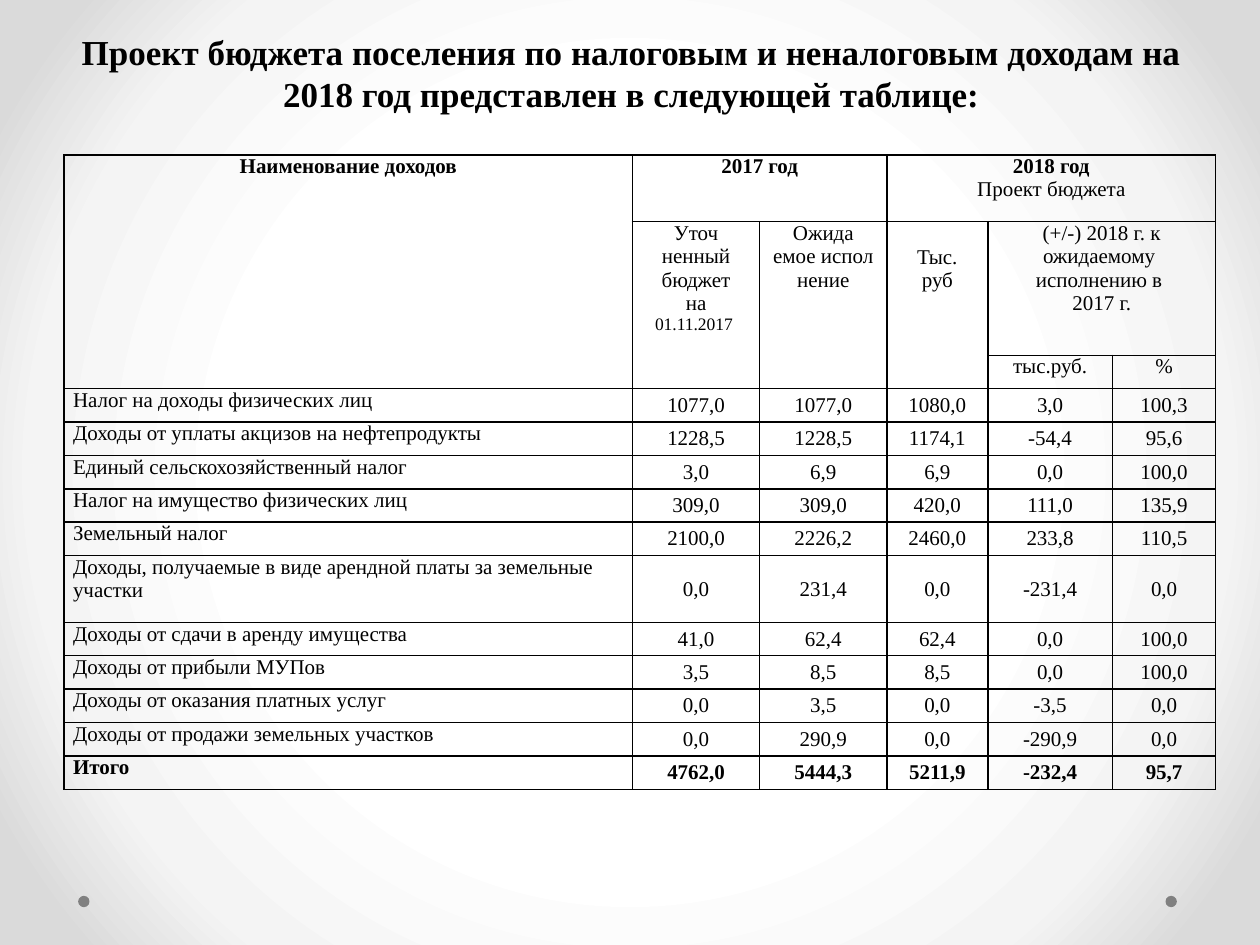
from itertools import product

from pptx import Presentation
from pptx.dml.color import RGBColor
from pptx.enum import shapes, text
from pptx.oxml import parse_xml
from pptx.oxml.ns import nsdecls, qn
from pptx.util import Inches, Pt

BLACK = RGBColor(0x00, 0x00, 0x00)
GRAY = RGBColor(0x80, 0x80, 0x80)
WHITE = RGBColor(0xFF, 0xFF, 0xFF)
PALE = RGBColor(0xF4, 0xF4, 0xF4)
SILVER = RGBColor(0xDA, 0xDA, 0xDA)
FONT = "Times New Roman"
LEFT, CENTER, JUSTIFY = (text.PP_ALIGN.LEFT, text.PP_ALIGN.CENTER, text.PP_ALIGN.JUSTIFY)

TITLE = ("Проект бюджета поселения по налоговым и неналоговым доходам "
         "на 2018 год представлен в следующей таблице:")
COLUMN_WIDTHS = [4.51, 1.01, 1.01, 0.8, 0.99, 0.82]
ROW_UNIT = 0.265
ROW_UNITS = [2, 4, 1, 1, 1, 1, 1, 1, 2, 1, 1, 1, 1, 1]

# Header cells: row, column, row span, column span, lines of (text, size, bold)
HEADERS = [
    (0, 0, 3, 1, [("Наименование доходов", 12, True)]),
    (0, 1, 1, 2, [("2017 год", 12, True)]),
    (0, 3, 1, 3, [("2018 год", 12, True), ("Проект бюджета", 12, False)]),
    (1, 1, 2, 1, [("Уточ", 12, False), ("ненный бюджет", 12, False),
                  ("на", 12, False), ("01.11.2017 ", 10, False)]),
    (1, 2, 2, 1, [("Ожида", 12, False), ("емое испол", 12, False), ("нение", 12, False)]),
    (1, 3, 2, 1, [("Тыс.", 12, False), ("руб", 12, False)]),
    (1, 4, 1, 2, [("(+/-) 2018 г. к ожидаемому ", 12, False),
                  ("исполнению в ", 12, False), ("2017 г.", 12, False)]),
    (2, 4, 1, 1, [("тыс.руб.", 12, False)]),
    (2, 5, 1, 1, [("%", 12, False)]),
]
INCOMES = [
    ("Налог на доходы физических лиц", "1077,0", "1077,0", "1080,0", "3,0", "100,3"),
    ("Доходы от уплаты акцизов на нефтепродукты", "1228,5", "1228,5", "1174,1", "-54,4", "95,6"),
    ("Единый сельскохозяйственный налог", "3,0", "6,9", "6,9", "0,0", "100,0"),
    ("Налог на имущество физических лиц", "309,0", "309,0", "420,0", "111,0", "135,9"),
    ("Земельный налог", "2100,0", "2226,2", "2460,0", "233,8", "110,5"),
    ("Доходы, получаемые в виде арендной платы за земельные участки",
     "0,0", "231,4", "0,0", "-231,4", "0,0"),
    ("Доходы от сдачи в аренду имущества", "41,0", "62,4", "62,4", "0,0", "100,0"),
    ("Доходы от прибыли МУПов", "3,5", "8,5", "8,5", "0,0", "100,0"),
    ("Доходы от оказания платных услуг", "0,0", "3,5", "0,0", "-3,5", "0,0"),
    ("Доходы от продажи земельных участков", "0,0", "290,9", "0,0", "-290,9", "0,0"),
    ("Итого", "4762,0", "5444,3", "5211,9", "-232,4", "95,7"),
]
FIRST_INCOME_ROW = 3
FIRST_JUSTIFIED = 6


def add_run(paragraph, words, size, bold):
    run = paragraph.add_run()
    run.text = words
    font = run.font
    font.name, font.size, font.bold = FONT, Pt(size), bold
    font.color.rgb = BLACK


def paint_background(slide):
    slide.background.fill.gradient()
    gradient = slide.background._cSld.find(".//" + qn("a:gradFill"))
    for child in list(gradient):
        gradient.remove(child)
    stops = "".join(f'<a:gs pos="{share * 1000}"><a:srgbClr val="{color}"/></a:gs>'
                    for share, color in [(0, WHITE), (50, WHITE), (76, PALE),
                                         (92, SILVER), (100, SILVER)])
    gradient.append(parse_xml(f'<a:gsLst {nsdecls("a")}>{stops}</a:gsLst>'))
    gradient.append(parse_xml(
        f'<a:path {nsdecls("a")} path="circle">'
        '<a:fillToRect l="50000" t="50000" r="50000" b="50000"/></a:path>'))


def add_corner_dots(slide, lefts, top, size):
    for left in lefts:
        dot = slide.shapes.add_shape(shapes.MSO_SHAPE.OVAL, Inches(left), Inches(top),
                                     Inches(size), Inches(size))
        dot.shadow.inherit = False
        dot.fill.solid()
        dot.fill.fore_color.rgb = GRAY
        dot.line.fill.background()


def place_title(slide, left, top, width, height):
    title = slide.shapes.title
    title.left, title.top = Inches(left), Inches(top)
    title.width, title.height = Inches(width), Inches(height)
    frame = title.text_frame
    frame.word_wrap = True
    frame.auto_size = text.MSO_AUTO_SIZE.NONE
    frame.vertical_anchor = text.MSO_ANCHOR.BOTTOM
    frame.paragraphs[0].alignment = CENTER
    add_run(frame.paragraphs[0], TITLE, 20, True)


def format_cell(cell):
    cell.margin_left = cell.margin_right = Inches(0.07)
    cell.margin_top = cell.margin_bottom = 0
    properties = cell._tc.get_or_add_tcPr()
    for side in "LRTB":
        properties.append(parse_xml(
            f'<a:ln{side} {nsdecls("a")} w="{Pt(1)}"><a:solidFill>'
            f'<a:srgbClr val="{BLACK}"/></a:solidFill></a:ln{side}>'))
    cell.fill.background()


def write_cell(cell, lines, alignment=CENTER):
    frame = cell.text_frame
    for index, (words, size, bold) in enumerate(lines):
        paragraph = frame.add_paragraph() if index else frame.paragraphs[0]
        paragraph.alignment = alignment
        add_run(paragraph, words, size, bold)


def add_income_table(slide, left, top, width, height):
    table = slide.shapes.add_table(len(ROW_UNITS), len(COLUMN_WIDTHS), Inches(left),
                                   Inches(top), Inches(width), Inches(height)).table
    table.first_row = table.horz_banding = False
    for column, column_width in zip(table.columns, COLUMN_WIDTHS):
        column.width = Inches(column_width)
    for row, units in zip(table.rows, ROW_UNITS):
        row.height = Inches(units * ROW_UNIT)
    for row, column in product(range(len(ROW_UNITS)), range(len(COLUMN_WIDTHS))):
        format_cell(table.cell(row, column))

    # Header with merged cells
    for row, column, row_span, column_span, lines in HEADERS:
        cell = table.cell(row, column)
        if row_span * column_span > 1:
            cell.merge(table.cell(row + row_span - 1, column + column_span - 1))
        write_cell(cell, lines)
    table.cell(1, 3).margin_top = Inches(0.19)

    # Incomes, with the total in the last row
    for index, (income, *amounts) in enumerate(INCOMES):
        row = FIRST_INCOME_ROW + index
        bold = index == len(INCOMES) - 1
        write_cell(table.cell(row, 0), [(income, 12, bold)],
                   JUSTIFY if index >= FIRST_JUSTIFIED else LEFT)
        for column, amount in enumerate(amounts, start=1):
            cell = table.cell(row, column)
            cell.vertical_anchor = text.MSO_ANCHOR.MIDDLE
            write_cell(cell, [(amount, 12, bold)])


def main():
    deck = Presentation()
    deck.slide_width, deck.slide_height = Inches(10), Inches(7.5)
    slide = deck.slides.add_slide(deck.slide_layouts[5])
    paint_background(slide)
    add_corner_dots(slide, [0.62, 9.25], 7.11, 0.09)
    place_title(slide, 0.51, 0.36, 9, 0.6)
    add_income_table(slide, 0.51, 1.23, sum(COLUMN_WIDTHS), sum(ROW_UNITS) * ROW_UNIT)
    deck.save("out.pptx")


if __name__ == "__main__":
    main()
